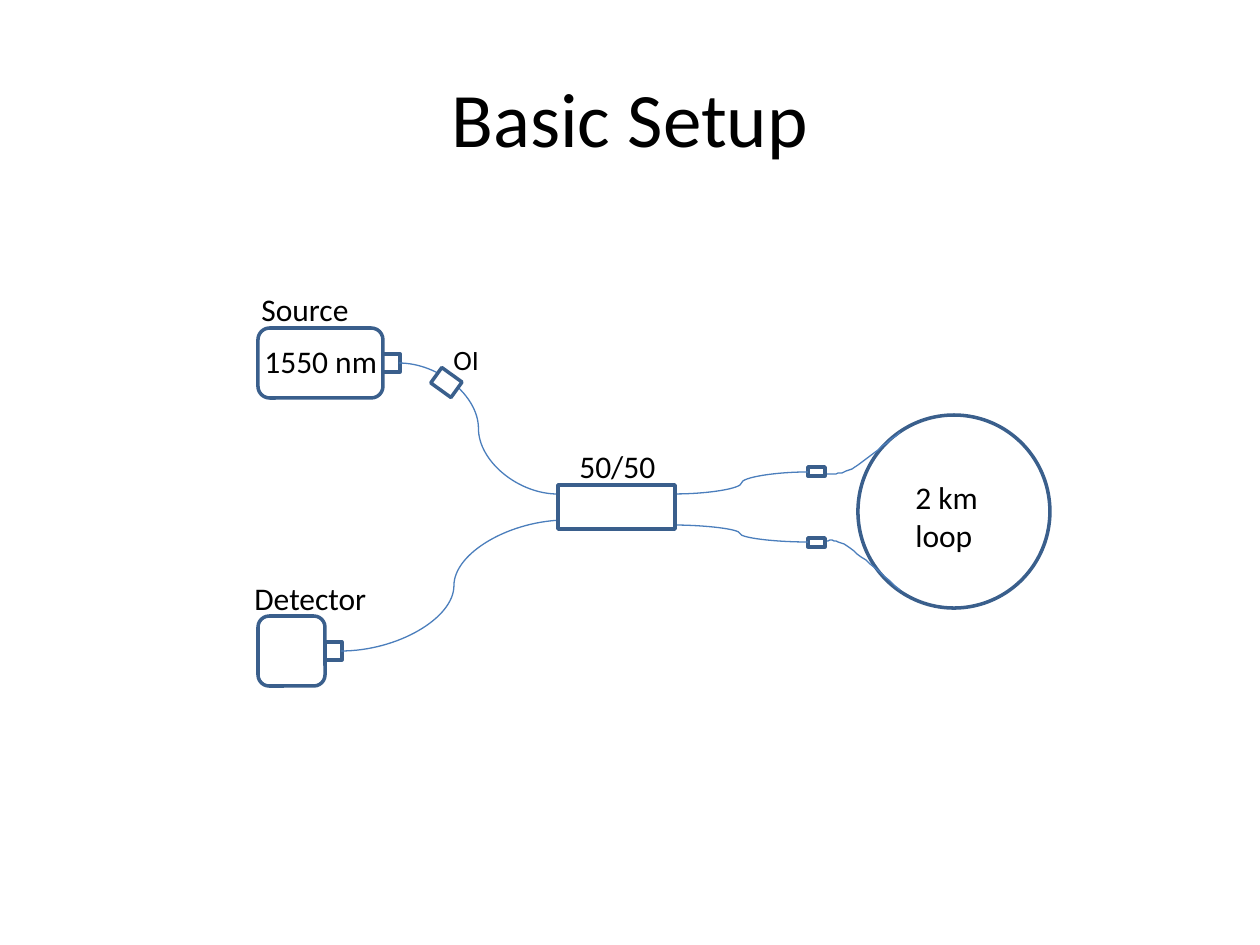
from lxml import etree
from pptx import Presentation, util as u
from pptx.dml.color import RGBColor
from pptx.enum import shapes, text
from pptx.oxml import ns

PX = u.Inches(1) / 126
OUTLINE, FIBRE, WHITE, BLACK = "3A5F8C", "4B7EBC", "FFFFFF", "000000"
KIND = shapes.MSO_SHAPE


def px(*values):
    return [round(value * PX) for value in values]


def color(hex_string):
    return RGBColor.from_string(hex_string)


def set_line(item, hex_string, width):
    item.line.color.rgb = color(hex_string)
    item.line.width = u.Pt(width)


def add_part(slide, kind, *box, rotation=0):
    shape = slide.shapes.add_shape(kind, *px(*box))
    shape.shadow.inherit = False
    shape.fill.solid()
    shape.fill.fore_color.rgb = color(WHITE)
    set_line(shape, OUTLINE, 2)
    shape.rotation = rotation


def add_label(slide, wording, *box, size=18, centered=False):
    frame = slide.shapes.add_textbox(*px(*box)).text_frame
    frame.word_wrap = True
    frame.text = wording
    paragraph = frame.paragraphs[0]
    if centered:
        frame.vertical_anchor = text.MSO_ANCHOR.MIDDLE
        paragraph.alignment = text.PP_ALIGN.CENTER
    font = paragraph.runs[0].font
    font.name, font.size = "Calibri", u.Pt(size)
    font.color.rgb = color(BLACK)


def add_device(slide, x, y, width):
    """A rounded box with a fibre port on its right side."""
    add_part(slide, KIND.RECTANGLE, x + width - 8, y + 26, 25, 18)
    add_part(slide, KIND.ROUNDED_RECTANGLE, x, y, width, 70)


def add_fibre(slide, *ends):
    connector = slide.shapes.add_connector(shapes.MSO_CONNECTOR.CURVE, *px(*ends))
    set_line(connector, FIBRE, 0.75)
    etree.SubElement(connector._element.spPr, ns.qn("a:effectLst"))


def bezier(points, t):
    weights = ((1 - t) ** 3, 3 * t * (1 - t) ** 2, 3 * t * t * (1 - t), t ** 3)
    return tuple(sum(w * p[axis] for w, p in zip(weights, points)) for axis in (0, 1))


def add_loop_end(slide, points, steps=12):
    """A fibre along joined cubic curves: a start, then three points per curve."""
    track = [bezier(points[i:i + 4], step / steps)
             for i in range(0, len(points) - 1, 3) for step in range(1, steps + 1)]
    builder = slide.shapes.build_freeform(*points[0], scale=PX)
    builder.add_line_segments(track, close=False)
    shape = builder.convert_to_shape()
    shape.shadow.inherit = False
    shape.fill.background()
    set_line(shape, FIBRE, 0.75)


def main():
    presentation = Presentation()
    presentation.slide_width, presentation.slide_height = u.Inches(10), u.Inches(7.5)
    slide = presentation.slides.add_slide(presentation.slide_layouts[6])

    add_label(slide, "Basic Setup", 63, 38, 1134, 157, size=44, centered=True)

    # Source and detector
    add_device(slide, 258, 328, 125)
    add_label(slide, "Source", 249, 284, 149, 50)
    add_label(slide, "1550 nm", 252, 336, 205, 53)
    add_device(slide, 258, 616, 67)
    add_label(slide, "Detector", 242, 573, 147, 50)

    # Fibre loop with its two splices
    add_part(slide, KIND.OVAL, 858, 415, 192, 193)
    add_loop_end(slide, [(900, 432), (882, 447), (864, 461), (852, 469), (840, 475),
                         (834, 473), (829, 474), (825, 474), (827, 474), (825, 474)])
    add_loop_end(slide, [(900, 590), (879, 572), (859, 554), (847, 546), (834, 538),
                         (827, 541), (822, 541), (816, 539), (818, 541), (816, 541)])
    for y in (467, 538):
        add_part(slide, KIND.RECTANGLE, 808, y, 17, 9)
    add_label(slide, "2 km loop", 903, 472, 125, 43)

    # Fibres into and out of the coupler
    for ends in ((675, 494, 808, 472), (399, 363, 558, 494),
                 (341, 651, 567, 520), (672, 525, 808, 542)):
        add_fibre(slide, *ends)
    add_part(slide, KIND.RECTANGLE, 558, 485, 117, 44)
    add_label(slide, "50/50", 567, 441, 116, 50)

    # Optical isolator
    add_part(slide, KIND.RECTANGLE, 437, 370, 19, 25, rotation=305.7)
    add_label(slide, "OI", 441, 336, 73, 47, size=16)

    presentation.save("out.pptx")


if __name__ == "__main__":
    main()
